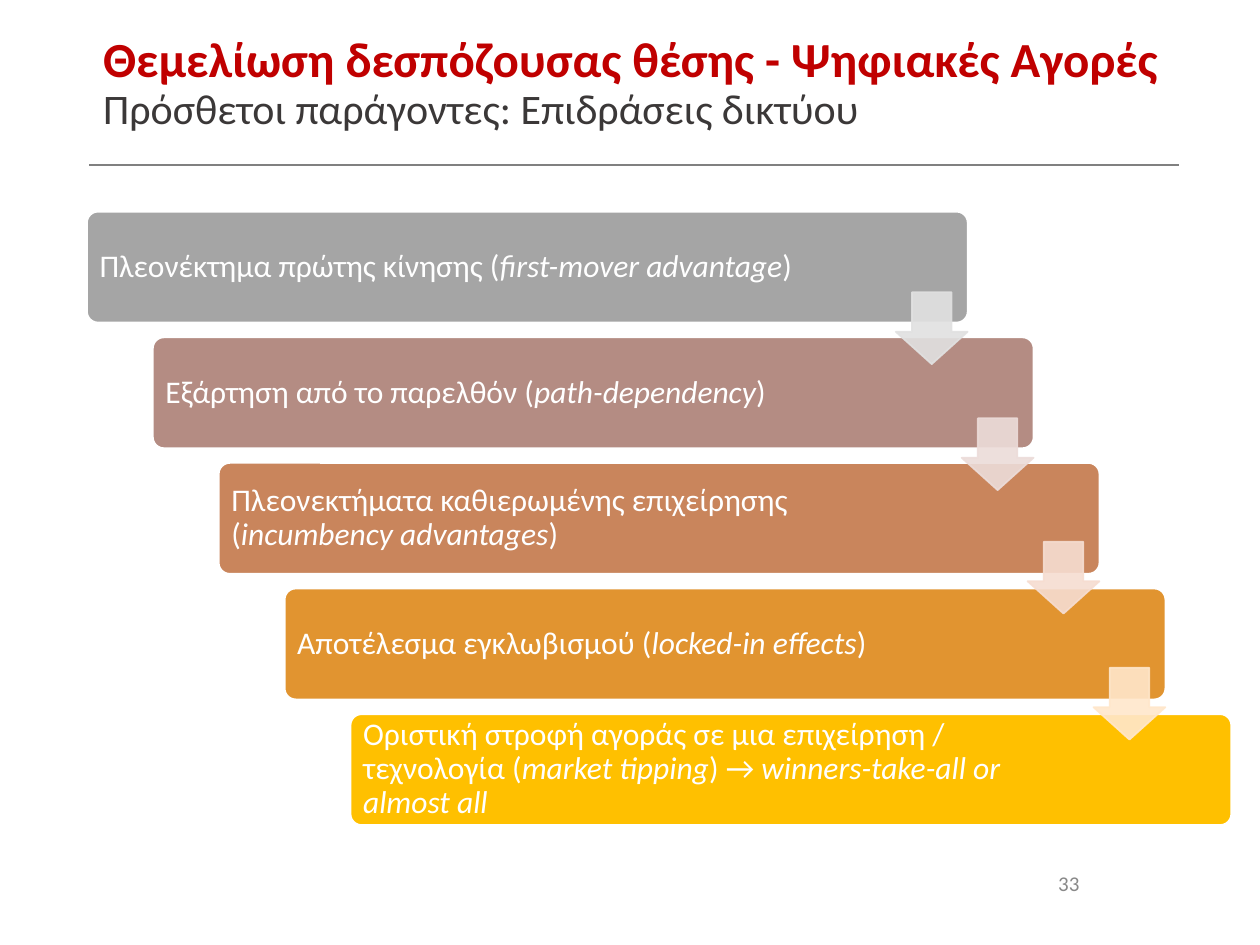
import pptx
import pptx.util
import pptx.dml.color
import pptx.enum.shapes
import pptx.enum.text
import pptx.oxml.ns
from lxml import etree

Inches = pptx.util.Inches
Pt = pptx.util.Pt
SHAPES = pptx.enum.shapes.MSO_SHAPE

FONT = "Calibri"
COLORS = {
    "title": "C00000", "subtitle": "3B3838", "rule": "808080",
    "number": "898989", "white": "FFFFFF",
}

# Each step: fill, arrow colour, arrow top, and (text, italic) pieces
STEPS = [
    ("A5A5A5", "E1E1E1", 2.32,
     [("Πλεονέκτημα πρώτης κίνησης (", False),
      ("first-mover advantage", True), (")", False)]),
    ("B48C83", "ECDCD9", 3.32,
     [("Εξάρτηση από το παρελθόν (", False),
      ("path-dependency", True), (")", False)]),
    ("C9855C", "F6DDD1", 4.3,
     [("Πλεονεκτήματα καθιερωμένης επιχείρησης (", False),
      ("incumbency advantages", True), (")", False)]),
    ("E19430", "FFE7CB", 5.3,
     [("Αποτέλεσμα εγκλωβισμού (", False),
      ("locked-in effects", True), (")", False)]),
    ("FFC000", None, None,
     [("Οριστική στροφή αγοράς σε μια επιχείρηση / τεχνολογία (", False),
      ("market tipping", True), (") → ", False),
      ("winners-take-all or almost all", True)]),
]
STEP_LEFT, STEP_TOP = 0.69, 1.68
STEP_WIDTH, STEP_HEIGHT = 6.99, 0.88
SHIFT_X, SHIFT_Y = 0.523, 0.997
ARROW_SIZE = 0.57


def rgb(value):
    return pptx.dml.color.RGBColor.from_string(value)


def set_font(font, size, color, bold=None):
    font.name = FONT
    font.size = Pt(size)
    font.bold = bold
    font.color.rgb = rgb(color)


def add_text_area(slide, left, top, width, height, inset=None):
    frame = slide.shapes.add_textbox(
        Inches(left), Inches(top), Inches(width), Inches(height)).text_frame
    frame.word_wrap = True
    frame.vertical_anchor = pptx.enum.text.MSO_ANCHOR.MIDDLE
    if inset is not None:
        frame.margin_left = frame.margin_right = Inches(inset)
        frame.margin_top = frame.margin_bottom = Inches(inset)
    return frame.paragraphs[0]


def add_block(slide, kind, left, top, width, height, fill, line, adjustments):
    block = slide.shapes.add_shape(
        kind, Inches(left), Inches(top), Inches(width), Inches(height))
    block.shadow.inherit = False
    block.fill.solid()
    block.fill.fore_color.rgb = rgb(fill)
    block.line.color.rgb = rgb(line)
    block.line.width = Pt(1)
    for index, value in enumerate(adjustments):
        block.adjustments[index] = value
    return block


def set_opacity(block, percent):
    for color in block._element.spPr.iter(pptx.oxml.ns.qn("a:srgbClr")):
        alpha = etree.SubElement(color, pptx.oxml.ns.qn("a:alpha"))
        alpha.set("val", str(percent * 1000))


def add_header(slide):
    rule = slide.shapes.add_connector(
        pptx.enum.shapes.MSO_CONNECTOR.STRAIGHT,
        Inches(0.71), Inches(1.31), Inches(9.36), Inches(1.31))
    rule.line.color.rgb = rgb(COLORS["rule"])
    rule.line.width = Pt(1)
    etree.SubElement(rule._element.spPr, pptx.oxml.ns.qn("a:effectLst"))

    heading = add_text_area(slide, 0.72, 0.13, 8.62, 1.08)
    heading.line_spacing = 0.9
    title = heading.add_run()
    title.text = "Θεμελίωση δεσπόζουσας θέσης - Ψηφιακές Αγορές"
    set_font(title.font, 28, COLORS["title"], True)
    heading.add_line_break()
    subtitle = heading.add_run()
    subtitle.text = "Πρόσθετοι παράγοντες: Επιδράσεις δικτύου"
    set_font(subtitle.font, 24, COLORS["subtitle"], False)


def add_step(slide, index, fill, pieces):
    left = STEP_LEFT + index * SHIFT_X
    top = STEP_TOP + index * SHIFT_Y
    add_block(slide, SHAPES.ROUNDED_RECTANGLE, left, top, STEP_WIDTH,
              STEP_HEIGHT, fill, COLORS["white"], [0.1])
    label_width = 5.94 if index == 0 else 5.85
    label = add_text_area(slide, left + 0.03, top + 0.03, label_width, 0.82,
                          inset=0.07)
    label.line_spacing = 0.9
    set_font(label.font, 18, COLORS["white"])
    for text, italic in pieces:
        run = label.add_run()
        run.text = text
        run.font.italic = italic


def add_arrow(slide, index, color, top):
    # The arrow ends flush with the right edge of its step
    left = STEP_LEFT + index * SHIFT_X + STEP_WIDTH - ARROW_SIZE
    arrow = add_block(slide, SHAPES.DOWN_ARROW, left, top, ARROW_SIZE,
                      ARROW_SIZE, color, color, [0.55, 0.45])
    set_opacity(arrow, 90)


def main():
    deck = pptx.Presentation()
    deck.slide_width, deck.slide_height = Inches(10), Inches(7.5)
    slide = deck.slides.add_slide(deck.slide_layouts[6])

    # Title, subtitle and rule
    add_header(slide)

    # Slide number
    number = add_text_area(slide, 8.3, 6.81, 1.03, 0.4)
    number.text = "33"
    set_font(number.font, 12, COLORS["number"])

    # Staircase of steps, then the arrows on top
    for index, (fill, _, _, pieces) in enumerate(STEPS):
        add_step(slide, index, fill, pieces)
    for index, (_, color, top, _) in enumerate(STEPS[:-1]):
        add_arrow(slide, index, color, top)

    deck.save("out.pptx")


if __name__ == "__main__":
    main()
